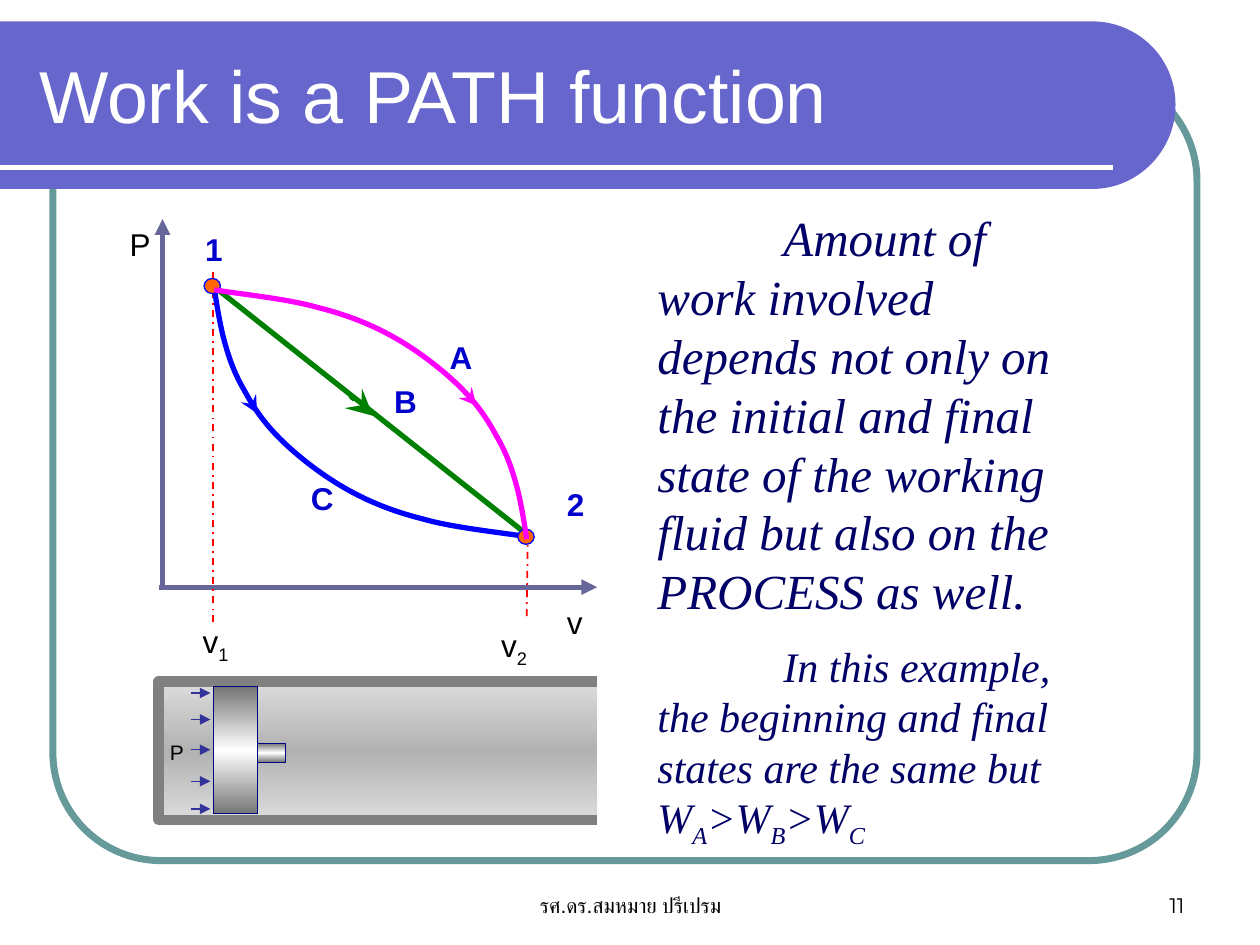
from copy import deepcopy
from dataclasses import dataclass

from lxml import etree
from pptx import Presentation
from pptx.dml.color import RGBColor
from pptx.enum.dml import MSO_LINE
from pptx.enum.shapes import MSO_CONNECTOR, MSO_SHAPE
from pptx.enum.text import MSO_ANCHOR, PP_ALIGN
from pptx.oxml.ns import qn
from pptx.util import Inches, Pt

STRAIGHT = MSO_CONNECTOR.STRAIGHT
RECTANGLE, OVAL = MSO_SHAPE.RECTANGLE, MSO_SHAPE.OVAL
ROUNDED = MSO_SHAPE.ROUNDED_RECTANGLE
DASH_DOT = MSO_LINE.DASH_DOT
MIDDLE, BOTTOM, TOP = MSO_ANCHOR.MIDDLE, MSO_ANCHOR.BOTTOM, MSO_ANCHOR.TOP
LEFT, CENTER, RIGHT = PP_ALIGN.LEFT, PP_ALIGN.CENTER, PP_ALIGN.RIGHT

POINT_NAME = {"size": Pt(18), "bold": True, "color": "0000CC"}
AXIS_NAME = {"size": Pt(18)}
METAL = ("767676", "FFFFFF", "767676")
GAS = ("DCDCDC", "B2B2B2", "DCDCDC")
AXIS_ARROW = {"type": "triangle"}
PROCESS_ARROW = {"type": "stealth", "w": "lg", "len": "lg"}

# Process C as Bezier triples measured from state 1; process A is its half turn.
PROCESS_SIZE = (2.48, 1.98)
PROCESS_C = [
    [(0.01, 0.08), (0.05, 0.33), (0.09, 0.46)],
    [(0.13, 0.6), (0.17, 0.7), (0.24, 0.82)],
    [(0.31, 0.95), (0.39, 1.07), (0.52, 1.2)],
    [(0.65, 1.33), (0.84, 1.48), (1.03, 1.59)],
    [(1.22, 1.7), (1.42, 1.78), (1.66, 1.84)],
    [(1.9, 1.91), (2.31, 1.95), PROCESS_SIZE],
]


def rgb(color):
    return RGBColor.from_string(color)


def set_line(line, color, width):
    line.color.rgb = rgb(color)
    line.width = Pt(width)


def set_fill(shape, colors):
    """Fill with nothing, one colour, or an even vertical gradient."""
    if not colors:
        shape.fill.background()
    elif len(colors) == 1:
        shape.fill.solid()
        shape.fill.fore_color.rgb = rgb(colors[0])
    else:
        shape.fill.gradient()
        shape.fill.gradient_angle = 90
        stop_list = shape._element.spPr.find(".//" + qn("a:gsLst"))
        while len(stop_list) < len(colors):
            stop_list.append(deepcopy(stop_list[0]))
        for index, stop in enumerate(shape.fill.gradient_stops):
            stop.position = index / (len(colors) - 1)
            stop.color.rgb = rgb(colors[index])


def add_run(paragraph, text, color="000000", baseline=0, **font_format):
    run = paragraph.add_run()
    run.text = text
    run.font.color.rgb = rgb(color)
    for name, value in {"name": "Arial", **font_format}.items():
        setattr(run.font, name, value)
    if baseline:
        run.font._element.set("baseline", str(baseline * 1000))


@dataclass
class Region:
    """Part of the slide whose contents are placed from its top left corner."""
    slide: object
    left: float
    top: float

    def place(self, x, y):
        return Inches(self.left + x), Inches(self.top + y)

    def line(self, start, end, color, width, arrow=None, dash=None):
        connector = self.slide.shapes.add_connector(
            STRAIGHT, *self.place(*start), *self.place(*end))
        set_line(connector.line, color, width)
        if dash:
            connector.line.dash_style = dash
        if arrow:
            etree.SubElement(connector.line._get_or_add_ln(), qn("a:tailEnd"), **arrow)
        etree.SubElement(connector._element.spPr, qn("a:effectLst"))

    def finish(self, shape, fill, color, width):
        shape.shadow.inherit = False
        set_fill(shape, fill)
        if color:
            set_line(shape.line, color, width)
        else:
            shape.line.fill.background()

    def shape(self, kind, x, y, width, height, fill, color, line_width):
        shape = self.slide.shapes.add_shape(
            kind, *self.place(x, y), Inches(width), Inches(height))
        self.finish(shape, fill, color, line_width)
        return shape

    def outline(self, start, segments, fill=(), color=None, width=0, close=False):
        """Draw segments of one point (straight) or three points (Bezier)."""
        builder = self.slide.shapes.build_freeform(*self.place(*start))
        points = [self.place(*point) for segment in segments for point in segment]
        builder.add_line_segments(points, close=close)
        shape = builder.convert_to_shape()
        steps = iter(shape._element.spPr.findall(".//" + qn("a:lnTo")))
        for segment in segments:
            first, *others = [next(steps) for _ in segment]
            if others:
                curve = etree.Element(qn("a:cubicBezTo"))
                first.addprevious(curve)
                for step in (first, *others):
                    curve.append(step[0])
                    step.getparent().remove(step)
        self.finish(shape, fill, color, width)

    def text(self, x, y, width, height, anchor=TOP):
        box = self.slide.shapes.add_textbox(
            *self.place(x, y), Inches(width), Inches(height))
        box.text_frame.word_wrap = True
        box.text_frame.vertical_anchor = anchor
        return box.text_frame

    def label(self, x, y, text, style, width=0.33, height=0.4, subscript="",
              align=LEFT, anchor=TOP):
        paragraph = self.text(x, y, width, height, anchor).paragraphs[0]
        paragraph.alignment = align
        add_run(paragraph, text, **style)
        if subscript:
            add_run(paragraph, subscript, baseline=-25, **style)


def add_background(region):
    frame = region.shape(ROUNDED, 0.42, 0.58, 9.08, 6.25, (), "669999", 4)
    frame.adjustments[0] = 0.137
    region.outline((0, 0.17), [
        [(8.67, 0.17)],
        [(9.03, 0.17), (9.33, 0.46), (9.33, 0.83)],
        [(9.33, 1.2), (9.03, 1.5), (8.67, 1.5)],
        [(0, 1.5)],
    ], fill=("6666CC",), close=True)
    region.line((0, 1.33), (8.83, 1.33), "FFFFFF", 3)


def add_title(region, width, height):
    title = region.slide.shapes.title
    title.left, title.top = region.place(0, 0)
    title.width, title.height = Inches(width), Inches(height)
    title.text_frame.vertical_anchor = MIDDLE
    paragraph = title.text_frame.paragraphs[0]
    paragraph.alignment = LEFT
    add_run(paragraph, "Work is a PATH function", "FFFFFF", size=Pt(42))


def add_process_plot(region):
    region.line((0.75, 0.52), (3.25, 2.5), "008000", 3)
    region.line((1.85, 1.4), (2.03, 1.56), "008000", 3, PROCESS_ARROW)
    region.line((0.33, 2.92), (3.81, 2.92), "666699", 3, AXIS_ARROW)
    region.line((0.36, 2.94), (0.36, 0), "666699", 3, AXIS_ARROW)
    region.line((0.76, 3.2), (0.76, 0.4), "FF0000", 1, dash=DASH_DOT)
    region.line((3.25, 3.15), (3.26, 2.46), "FF0000", 1, dash=DASH_DOT)

    width, height = PROCESS_SIZE
    path_c = [[(0.77 + x, 0.54 + y) for x, y in segment] for segment in PROCESS_C]
    path_a = [[(0.77 + width - x, 0.56 + height - y) for x, y in segment]
              for segment in PROCESS_C]
    region.outline((0.77, 0.54), path_c, color="0000FF", width=3)
    region.line((1.02, 1.38), (1.11, 1.54), "0000FF", 2, PROCESS_ARROW)
    for x, y in [(0.69, 0.47), (3.18, 2.46)]:
        region.shape(OVAL, x, y, 0.13, 0.12, ("FF6600",), "0000FF", 0.75)
    region.outline((0.77 + width, 0.56 + height), path_a, color="FF00FF", width=3)
    region.line((2.69, 1.29), (2.85, 1.48), "FF00FF", 2, PROCESS_ARROW)

    for text, x, y in [("1", 0.6, 0.04), ("2", 3.47, 2.06), ("A", 2.54, 0.89),
                       ("B", 2.1, 1.24), ("C", 1.44, 2.01)]:
        region.label(x, y, text, POINT_NAME)
    region.label(0, 0, "P", AXIS_NAME)
    region.label(3.47, 3, "v", AXIS_NAME)
    region.label(0.58, 3.15, "v", AXIS_NAME, width=0.53, subscript="1")
    region.label(2.95, 3.18, "v", AXIS_NAME, width=0.53, subscript="2")


def add_cylinder(region, width, height):
    region.outline((width, 0), [[(0, 0)], [(0, height)], [(width, height)]],
                   GAS, "808080", 6)
    for y in (0.09, 0.3, 0.54, 0.79, 1.01):
        region.line((0.26, y), (0.41, y), "333399", 0.75, AXIS_ARROW)
    region.label(-0.01, 0.41, "P", {"size": Pt(12)}, width=0.27, height=0.3)
    region.shape(RECTANGLE, 0.43, 0.04, 0.35, 1.01, METAL, "000080", 0.5)
    region.shape(RECTANGLE, 0.78, 0.49, 0.23, 0.15, METAL, "000080", 0.5)


def add_explanation(region, width, height):
    frame = region.text(0, 0, width, height)
    amount = [("Amount of work involved depends not only on the initial and final "
               "state of the working fluid but also on the PROCESS as well.", 0)]
    example = [("In this example, the beginning and final states are the same but W", 0),
               ("A", -25), (">W", 0), ("B", -25), (">W", 0), ("C", -25)]
    for index, (size, runs) in enumerate([(28, amount), (24, example)]):
        paragraph = frame.add_paragraph() if index else frame.paragraphs[0]
        paragraph.space_before = Pt(size / 2 if index else 0)
        paragraph._p.get_or_add_pPr().set("indent", str(Inches(1)))
        for text, baseline in runs:
            add_run(paragraph, text, "000066", baseline, name="Times New Roman",
                    size=Pt(size), italic=True)


def add_footer(region):
    region.label(0, 0, "รศ.ดร.สมหมาย ปรีเปรม", {"size": Pt(12)}, 3.17, 0.5,
                 align=CENTER, anchor=BOTTOM)
    region.label(3.75, 0, "11", {"size": Pt(12), "name": "Montserrat"}, 2.33, 0.5,
                 align=RIGHT, anchor=BOTTOM)


def main():
    presentation = Presentation()
    presentation.slide_width, presentation.slide_height = Inches(10), Inches(7.5)
    slide = presentation.slides.add_slide(presentation.slide_layouts[5])
    add_background(Region(slide, 0, 0))
    add_title(Region(slide, 0.21, 0.25), 8.77, 1)
    # The title comes first in the tree; bring it in front of the banner.
    slide.shapes._spTree.append(slide.shapes.title._element)
    add_process_plot(Region(slide, 0.93, 1.74))
    add_cylinder(Region(slide, 1.26, 5.41), 3.48, 1.1)
    add_explanation(Region(slide, 5.12, 1.6), 3.64, 5.17)
    add_footer(Region(slide, 3.42, 6.83))
    presentation.save("out.pptx")


if __name__ == "__main__":
    main()
